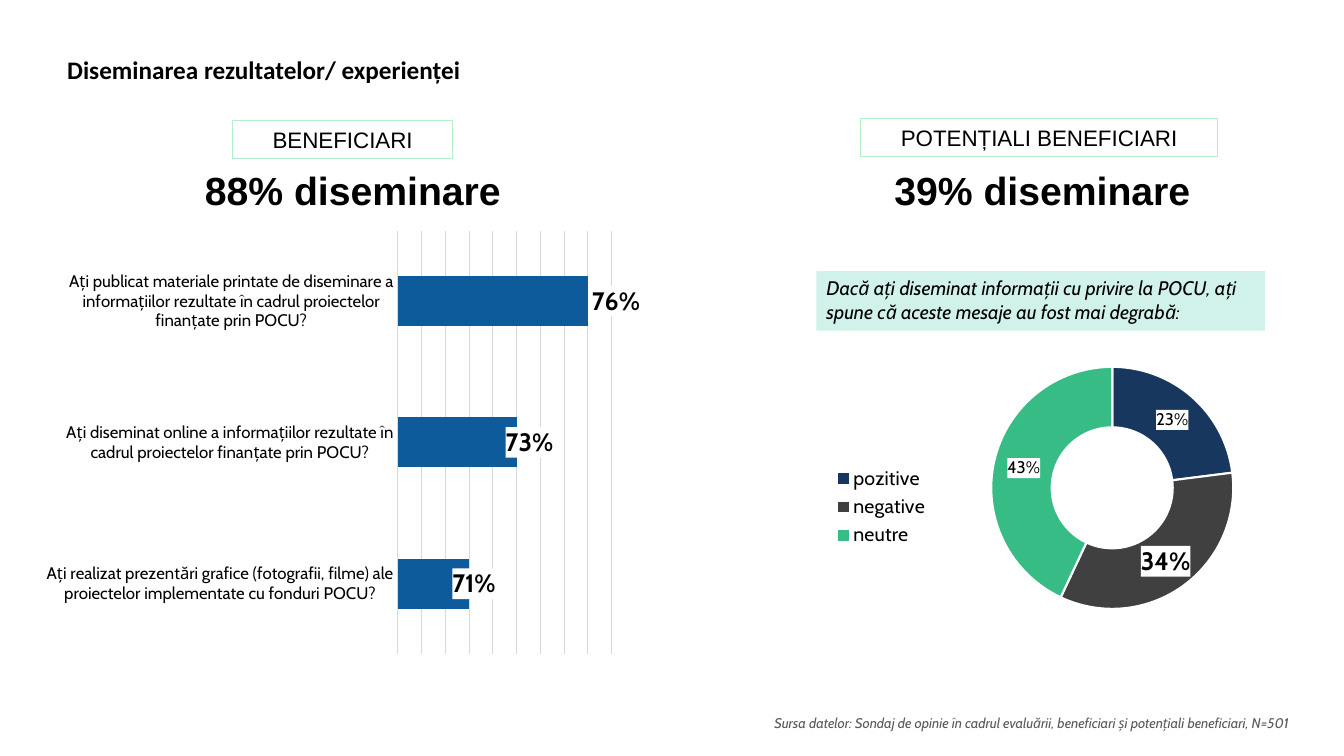
from lxml import etree
from pptx import Presentation
from pptx.chart.data import CategoryChartData
from pptx.dml.color import RGBColor
from pptx.enum.chart import XL_CHART_TYPE, XL_LABEL_POSITION, XL_LEGEND_POSITION, XL_TICK_MARK
from pptx.enum.shapes import MSO_SHAPE
from pptx.enum.text import MSO_ANCHOR, PP_ALIGN
from pptx.oxml import parse_xml
from pptx.oxml.ns import nsdecls, qn
from pptx.util import Pt

BAR, DOUGHNUT = XL_CHART_TYPE.BAR_CLUSTERED, XL_CHART_TYPE.DOUGHNUT
OUTSIDE_END = XL_LABEL_POSITION.OUTSIDE_END
LEGEND_LEFT = XL_LEGEND_POSITION.LEFT
NO_TICK = XL_TICK_MARK.NONE
RECT = MSO_SHAPE.RECTANGLE
TOP, MIDDLE = MSO_ANCHOR.TOP, MSO_ANCHOR.MIDDLE
LEFT, CENTER, RIGHT = PP_ALIGN.LEFT, PP_ALIGN.CENTER, PP_ALIGN.RIGHT

BLACK = RGBColor(0x00, 0x00, 0x00)
WHITE = RGBColor(0xFF, 0xFF, 0xFF)
GREY = RGBColor(0x59, 0x59, 0x59)
GRID = RGBColor(0xD9, 0xD9, 0xD9)
BLUE = RGBColor(0x0D, 0x5B, 0x9B)
NAVY = RGBColor(0x17, 0x37, 0x5E)
CHARCOAL = RGBColor(0x40, 0x40, 0x40)
GREEN = RGBColor(0x38, 0xBC, 0x86)
PALE_GREEN = RGBColor(0xB4, 0xEF, 0xCC)
MINT = RGBColor(0xD0, 0xF2, 0xEA)

ACTIVITIES = [
    ("Ați publicat materiale printate de diseminare a informațiilor rezultate "
     "în cadrul proiectelor finanțate prin POCU?", 0.76),
    ("Ați diseminat online a informațiilor rezultate în cadrul proiectelor "
     "finanțate prin POCU?", 0.73),
    ("Ați realizat prezentări grafice (fotografii, filme) ale proiectelor "
     "implementate cu fonduri POCU?", 0.71),
]
TONES = [("pozitive", 0.23), ("negative", 0.34), ("neutre", 0.43)]


def style_font(font, size, name="Cabin", color=BLACK, bold=False, italic=False):
    """Set the look of a font."""
    font.name, font.size = name, Pt(size)
    font.bold, font.italic = bold, italic
    font.color.rgb = color


def write(sp, text, size, name, align=LEFT, anchor=MIDDLE, inset=(0, 3.6), **look):
    """Put one styled run of text into a shape."""
    tf = sp.text_frame
    tf.word_wrap, tf.vertical_anchor = True, anchor
    tf.margin_left = tf.margin_right = Pt(inset[0])
    tf.margin_top = tf.margin_bottom = Pt(inset[1])
    p = tf.paragraphs[0]
    p.alignment = align
    r = p.add_run()
    r.text = text
    style_font(r.font, size, name, **look)


def add_title(s, text):
    """Fill and place the title placeholder."""
    sp = s.shapes.title
    sp.left, sp.top, sp.width, sp.height = Pt(48), Pt(21.6), Pt(864), Pt(56)
    write(sp, text, 18, "Calibri", inset=(0, 0), bold=True)


def add_text(s, box, text, size, name, **options):
    """Add a text box."""
    write(s.shapes.add_textbox(*map(Pt, box)), text, size, name, **options)


def add_box(s, box, text, size, name, fill=None, line=None, **options):
    """Add a rectangle with text."""
    sp = s.shapes.add_shape(RECT, *map(Pt, box))
    sp.shadow.inherit = False
    for part, color in ((sp.fill, fill), (sp.line.fill, line)):
        if color is None:
            part.background()
        else:
            part.solid()
            part.fore_color.rgb = color
    if line is not None:
        sp.line.width = Pt(0.75)
    write(sp, text, size, name, **options)


def add_group(s, left, top, width, name, headline_left, share):
    """Add a framed group name with its headline share."""
    add_box(s, (left, top, width, 26.6), name, 16, "Arial", line=PALE_GREEN, align=CENTER)
    add_text(s, (headline_left, 115.2, 242.6, 41.2), f"{share} diseminare ", 28, "Arial",
             align=CENTER, bold=True)


def add_chart(s, kind, box, rows, plot_area):
    """Add a percentage chart with a fixed inner plot area."""
    data = CategoryChartData(number_format="0%")
    data.categories = [label for label, value in rows]
    data.add_series("Series 1", [value for label, value in rows])
    chart = s.shapes.add_chart(kind, *map(Pt, box), data).chart
    chart.has_title = chart.has_legend = False
    style_font(chart.font, 10)
    area = chart._chartSpace.chart.plotArea
    for old in area.findall(qn("c:layout")):
        area.remove(old)
    area.insert(0, make_layout(*plot_area))
    return chart


def make_layout(x, y, w=None, h=None):
    """Make a manual layout, or an offset when no size is given."""
    layout = etree.Element(qn("c:layout"))
    manual = etree.SubElement(layout, qn("c:manualLayout"))
    settings = [("x", x), ("y", y)]
    if w is not None:
        settings = [("layoutTarget", "inner"), ("xMode", "edge"), ("yMode", "edge"),
                    *settings, ("w", w), ("h", h)]
    for tag, value in settings:
        etree.SubElement(manual, qn(f"c:{tag}")).set("val", str(value))
    return layout


def label_series(series, size, bold=False, position=None, special=(), offsets=()):
    """Show values on white, with special points in large bold type."""
    labels = series.data_labels
    labels.show_value, labels.number_format = True, "0%"
    labels.number_format_is_linked = False
    targets = [(labels, size, bold)]
    targets += [(series.points[i].data_label, 18, True) for i in special]
    for label, points, heavy in targets:
        style_font(label.font, points, bold=heavy)
        if position is not None:
            label.position = position
    for txt in list(series._element.iter(qn("c:txPr"))):
        txt.addprevious(parse_xml(
            f'<c:spPr {nsdecls("c", "a")}><a:solidFill><a:srgbClr val="{WHITE}"/>'
            '</a:solidFill></c:spPr>'))
    for label, dx in zip(series._element.iter(qn("c:dLbl")), offsets):
        label.insert(1, make_layout(dx, 0))


def add_activity_chart(s):
    """Add the bar chart of dissemination activities."""
    chart = add_chart(s, BAR, (31.7, 158.4, 425.5, 315.4), ACTIVITIES,
                      (0.595, 0.02, 0.36, 0.96))
    plot = chart.plots[0]
    plot.gap_width, plot.vary_by_categories = 182, False
    series = plot.series[0]
    series.format.fill.solid()
    series.format.fill.fore_color.rgb = BLUE
    label_series(series, 18, True, OUTSIDE_END, (1, 2), (-0.025, -0.035))
    cat, val = chart.category_axis, chart.value_axis
    cat.reverse_order = True
    cat.major_tick_mark = NO_TICK
    style_font(cat.tick_labels.font, 12)
    val.minimum_scale, val.maximum_scale, val.major_unit = 0.68, 0.77, 0.01
    val.visible, val.has_major_gridlines = False, True
    for line in (cat.format.line, val.major_gridlines.format.line):
        line.color.rgb, line.width = GRID, Pt(0.75)


def add_tone_chart(s):
    """Add the doughnut chart of message tones."""
    chart = add_chart(s, DOUGHNUT, (587.5, 248.4, 306.7, 227.5), TONES,
                      (0.35, 0.06, 0.65, 0.76))
    plot = chart.plots[0]
    plot._element.find(qn("c:holeSize")).set("val", "65")
    series = plot.series[0]
    for i, color in enumerate((NAVY, CHARCOAL, GREEN)):
        fmt = series.points[i].format
        fmt.fill.solid()
        fmt.fill.fore_color.rgb = color
        fmt.line.color.rgb, fmt.line.width = WHITE, Pt(1.5)
    label_series(series, 12, special=(1,))
    chart.has_legend = True
    chart.legend.position, chart.legend.include_in_layout = LEGEND_LEFT, False
    style_font(chart.legend.font, 14)


def main():
    """Build and save the slide."""
    prs = Presentation()
    prs.slide_width, prs.slide_height = Pt(960), Pt(540)
    s = prs.slides.add_slide(prs.slide_layouts[5])
    add_title(s, "Diseminarea rezultatelor/ experienței")
    add_text(s, (377.3, 506.9, 550, 19.4),
             "Sursa datelor: Sondaj de opinie în cadrul evaluării, beneficiari și "
             "potențiali beneficiari, N=501", 10, "Cabin", align=RIGHT, anchor=TOP,
             inset=(7.2, 3.6), color=GREY, italic=True)
    add_activity_chart(s)
    add_group(s, 166.3, 86.4, 157, "BENEFICIARI", 134.6, "88%")
    add_group(s, 614.9, 85, 254.9, "POTENȚIALI BENEFICIARI", 627.1, "39%")
    add_tone_chart(s)
    add_box(s, (583.2, 193.7, 320.4, 42.5),
            "Dacă ați diseminat informații cu privire la POCU, ați spune că aceste "
            "mesaje au fost mai degrabă:", 14, "Cabin", fill=MINT, anchor=TOP,
            inset=(7.2, 3.6), italic=True)
    prs.save("out.pptx")


if __name__ == "__main__":
    main()
